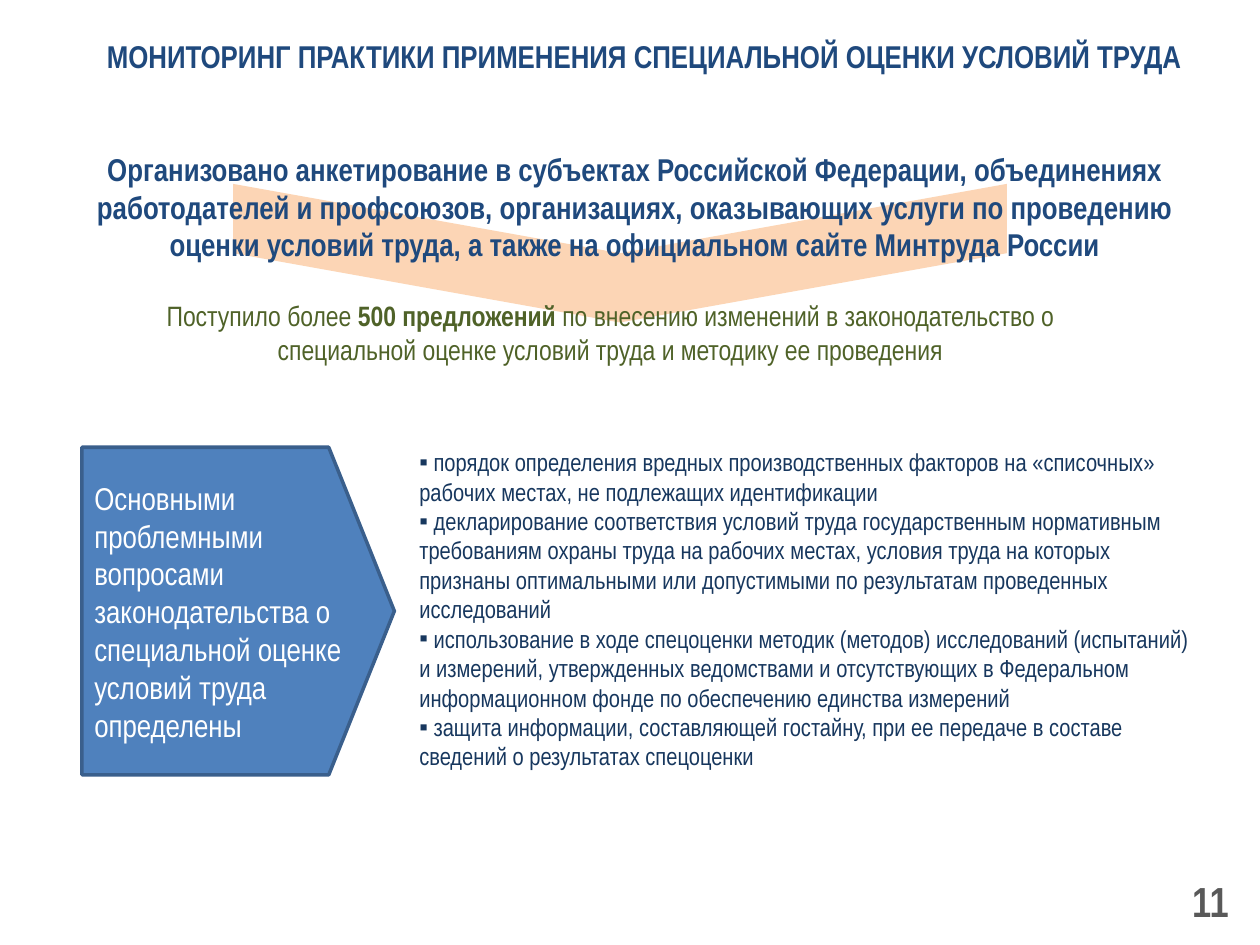
from dataclasses import dataclass

from lxml import etree
from pptx import Presentation
from pptx.dml.color import RGBColor
from pptx.enum.shapes import MSO_SHAPE
from pptx.enum.text import MSO_ANCHOR, MSO_AUTO_SIZE, PP_ALIGN
from pptx.oxml.ns import qn
from pptx.util import Inches, Pt

LEFT, CENTER, RIGHT = PP_ALIGN.LEFT, PP_ALIGN.CENTER, PP_ALIGN.RIGHT
TOP, MIDDLE = MSO_ANCHOR.TOP, MSO_ANCHOR.MIDDLE
CHEVRON, PENTAGON = MSO_SHAPE.CHEVRON, MSO_SHAPE.PENTAGON
NO_AUTOFIT = MSO_AUTO_SIZE.NONE
TITLE_ONLY = 5


@dataclass(frozen=True)
class Theme:
    font: str = "Arial Narrow"
    heading: str = "1F497D"
    result: str = "4F6228"
    body: str = "17375E"
    number: str = "595959"
    white: str = "FFFFFF"
    chevron: str = "FCD5B5"
    arrow: str = "4F81BD"
    arrow_edge: str = "3A5F8C"
    heading_size: int = 18
    result_size: int = 16
    body_size: int = 14
    number_size: int = 24


THEME = Theme()

TITLE = "МОНИТОРИНГ ПРАКТИКИ ПРИМЕНЕНИЯ СПЕЦИАЛЬНОЙ ОЦЕНКИ УСЛОВИЙ ТРУДА"
SURVEY = (
    "Организовано анкетирование в субъектах Российской Федерации, объединениях "
    "работодателей и профсоюзов, организациях, оказывающих услуги по проведению "
    "оценки условий труда, а также на официальном сайте Минтруда России"
)
RESULT = [
    ("Поступило более ", False),
    ("500 предложений ", True),
    ("по внесению изменений в законодательство о специальной оценке условий "
     "труда и методику ее проведения", False),
]
PROBLEMS_LABEL = (
    "Основными проблемными вопросами законодательства о специальной оценке "
    "условий труда определены"
)
PROBLEMS = [
    " порядок определения вредных производственных факторов на «списочных» "
    "рабочих местах, не подлежащих идентификации",
    " декларирование соответствия условий труда государственным нормативным "
    "требованиям охраны труда на рабочих местах, условия труда на которых "
    "признаны оптимальными или допустимыми по результатам проведенных исследований",
    " использование в ходе спецоценки методик (методов) исследований (испытаний) "
    "и измерений, утвержденных ведомствами и отсутствующих в Федеральном "
    "информационном фонде по обеспечению единства измерений",
    " защита информации, составляющей гостайну, при ее передаче в составе "
    "сведений о результатах спецоценки",
]


def color(value):
    return RGBColor.from_string(value)


def add_bullet(para, mark):
    properties = para._p.get_or_add_pPr()
    etree.SubElement(properties, qn("a:buFont")).set("typeface", "Arial")
    etree.SubElement(properties, qn("a:buChar")).set("char", mark)


def write_text(box, paragraphs, *, size, ink, bold=False, align=LEFT,
               anchor=TOP, bullet=None):
    """Fill a box; a paragraph is a string or a list of (text, bold) spans."""
    frame = box.text_frame
    frame.word_wrap = True
    frame.auto_size = NO_AUTOFIT
    frame.vertical_anchor = anchor
    for index, content in enumerate(paragraphs):
        para = frame.add_paragraph() if index else frame.paragraphs[0]
        para.alignment = align
        if bullet:
            add_bullet(para, bullet)
        spans = [(content, bold)] if isinstance(content, str) else content
        for text, strong in spans:
            span = para.add_run()
            span.text = text
            span.font.name = THEME.font
            span.font.size = Pt(size)
            span.font.bold = strong
            span.font.color.rgb = color(ink)


def add_text(page, place, paragraphs, **style):
    box = page.shapes.add_textbox(*map(Inches, place))
    write_text(box, paragraphs, **style)


def add_block(page, kind, place, fill, edge=None):
    block = page.shapes.add_shape(kind, *map(Inches, place))
    block.shadow.inherit = False
    block.fill.solid()
    block.fill.fore_color.rgb = color(fill)
    if edge:
        block.line.color.rgb = color(edge)
        block.line.width = Pt(2)
    else:
        block.line.fill.background()
    return block


def add_title(page, place, text):
    title = page.shapes.title
    title.left, title.top, title.width, title.height = map(Inches, place)
    write_text(title, [text], size=THEME.heading_size, ink=THEME.heading,
               bold=True, align=CENTER, anchor=MIDDLE)


def main():
    deck = Presentation()
    deck.slide_width, deck.slide_height = Inches(10), Inches(7.5)
    page = deck.slides.add_slide(deck.slide_layouts[TITLE_ONLY])

    # Downward chevron behind the survey text
    chevron = add_block(page, CHEVRON, (4.37, -1.06, 1.1, 6.14), THEME.chevron)
    chevron.rotation = 90

    # Title and page number
    add_title(page, (0.59, 0.21, 9.05, 0.47), TITLE)
    add_text(page, (7.52, 6.95, 2.33, 0.4), ["11"], size=THEME.number_size,
             ink=THEME.number, bold=True, align=RIGHT, anchor=MIDDLE)

    # Survey and its result
    add_text(page, (0.51, 1.14, 9.06, 1.01), [SURVEY], size=THEME.heading_size,
             ink=THEME.heading, bold=True, align=CENTER)
    add_text(page, (0.83, 2.32, 8.03, 0.64), [RESULT], size=THEME.result_size,
             ink=THEME.result, align=CENTER)

    # Problem list with its arrow label
    add_text(page, (3.23, 3.5, 6.34, 2.69), PROBLEMS, size=THEME.body_size,
             ink=THEME.body, bullet="▪")
    arrow = add_block(page, PENTAGON, (0.65, 3.55, 2.48, 2.6), THEME.arrow,
                      THEME.arrow_edge)
    arrow.adjustments[0] = 0.21
    write_text(arrow, [PROBLEMS_LABEL], size=THEME.heading_size,
               ink=THEME.white, anchor=MIDDLE)

    deck.save("out.pptx")


if __name__ == "__main__":
    main()
